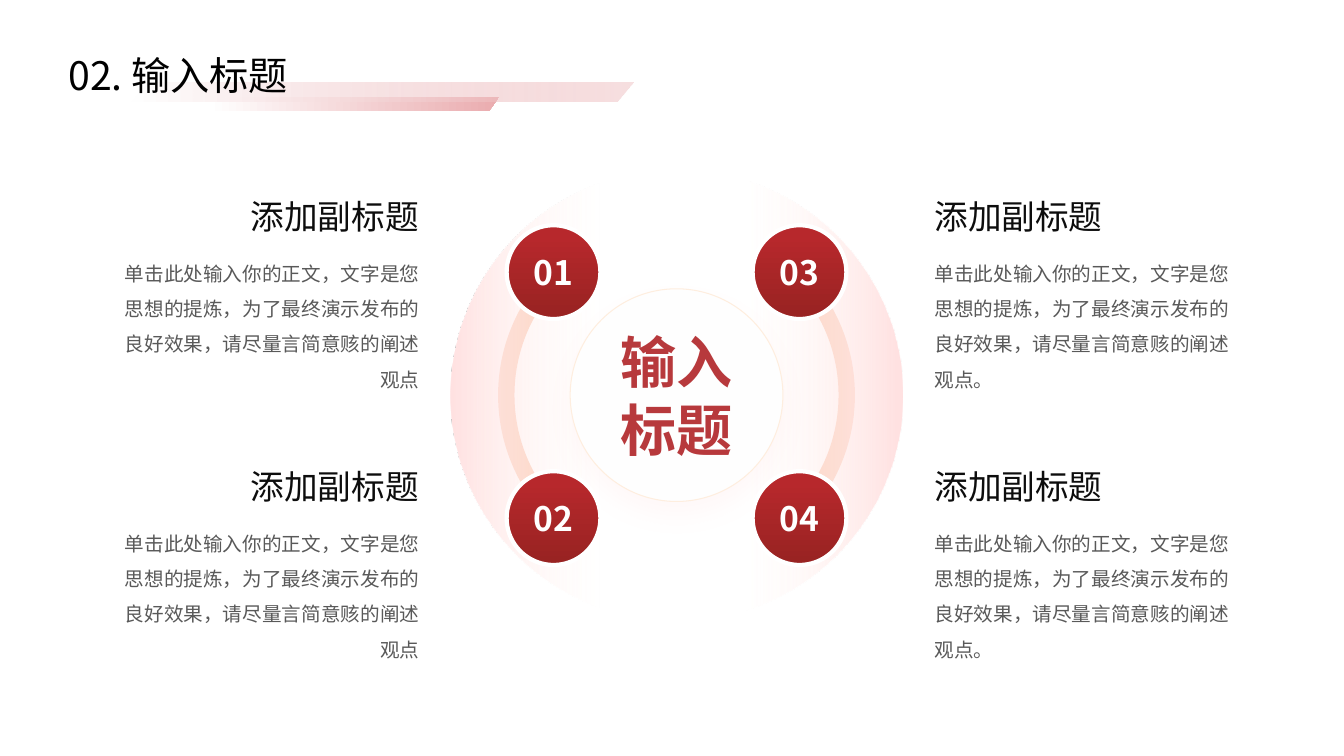
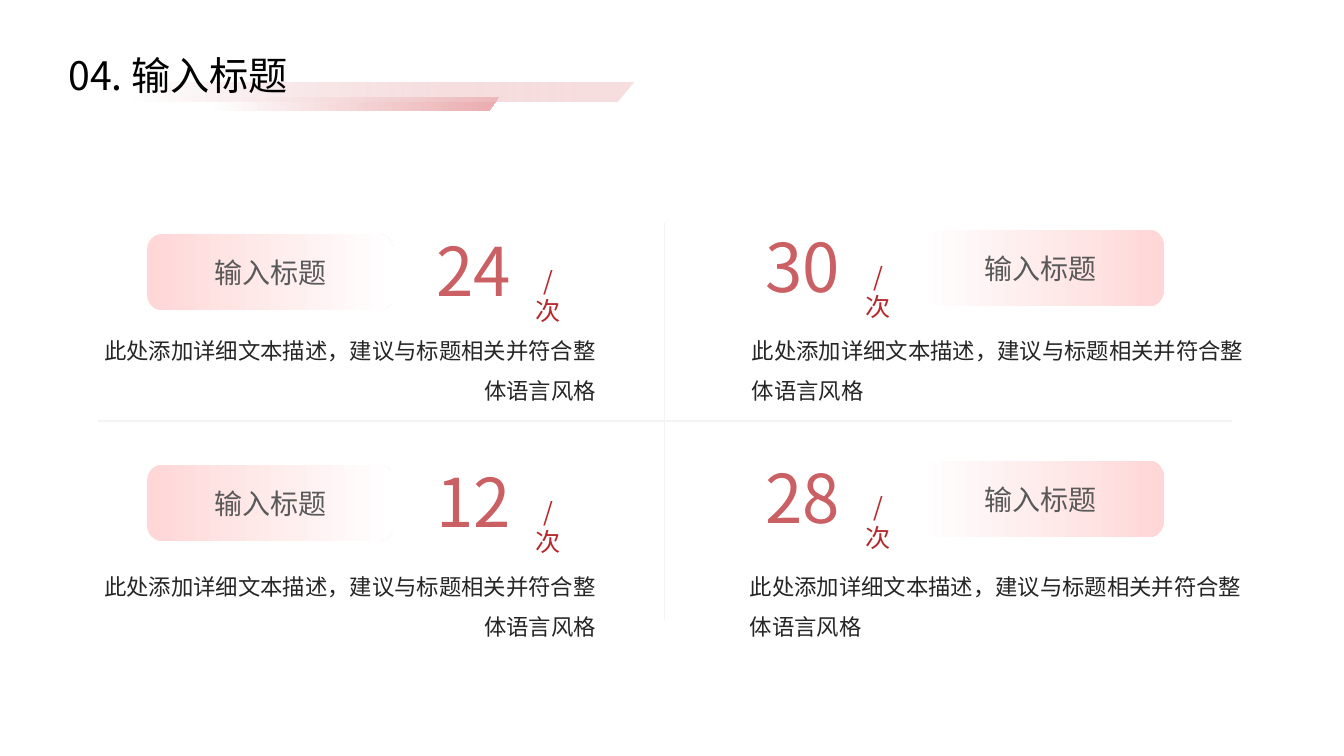
from pptx import Presentation
from pptx.dml.color import RGBColor
from pptx.enum.shapes import MSO_CONNECTOR, MSO_SHAPE
from pptx.enum.text import MSO_ANCHOR, PP_ALIGN
from pptx.oxml import parse_xml
from pptx.oxml.ns import nsdecls, qn
from pptx.util import Inches, Pt
from lxml import etree

LEFT, MID, RIGHT = PP_ALIGN.LEFT, PP_ALIGN.CENTER, PP_ALIGN.RIGHT
TOP, CENTER = MSO_ANCHOR.TOP, MSO_ANCHOR.MIDDLE
OVAL, ROUND = MSO_SHAPE.OVAL, MSO_SHAPE.ROUNDED_RECTANGLE
SLANT, ARC = MSO_SHAPE.PARALLELOGRAM, MSO_SHAPE.BLOCK_ARC
STRAIGHT = MSO_CONNECTOR.STRAIGHT

FONT = "Noto Sans CJK SC"
BLACK = RGBColor(0x00, 0x00, 0x00)
INK = RGBColor(0x0D, 0x0D, 0x0D)
DARK = RGBColor(0x26, 0x26, 0x26)
GREY = RGBColor(0x59, 0x59, 0x59)
RULE = RGBColor(0xF3, 0xF3, 0xF3)
WHITE = RGBColor(0xFF, 0xFF, 0xFF)
PAPER = RGBColor(0xFE, 0xFE, 0xFE)
CREAM = RGBColor(0xFF, 0xF9, 0xF5)
SAND = RGBColor(0xFE, 0xEE, 0xDF)
PEACH = RGBColor(0xFC, 0xCC, 0xB6)
BLUSH = RGBColor(0xFF, 0xE1, 0xE1)
PINK = RGBColor(0xFF, 0xD7, 0xD7)
ROSE = RGBColor(0xEA, 0xAC, 0xAF)
CORAL = RGBColor(0xCA, 0x5F, 0x64)
BRICK = RGBColor(0xB7, 0x39, 0x3C)
RED = RGBColor(0xB7, 0x28, 0x2C)
WINE = RGBColor(0x99, 0x23, 0x22)

HEAD = "输入标题"
SUB = "添加副标题"
BODY = "单击此处输入你的正文，文字是您思想的提炼，为了最终演示发布的良好效果，请尽量言简意赅的阐述观点"
DETAIL = "此处添加详细文本描述，建议与标题相关并符合整体语言风格"


def write(frame, text, size, color, align=LEFT, bold=False, lines=None, anchor=TOP):
    """Put one styled paragraph into a text frame."""
    frame.word_wrap = True
    frame.vertical_anchor = anchor
    para = frame.paragraphs[0]
    para.text = text
    para.alignment = align
    if lines:
        para.line_spacing = lines
    font = para.font
    font.name, font.size, font.bold = FONT, Pt(size), bold
    font.color.rgb = color
    props = para._p.pPr.find(qn("a:defRPr"))
    etree.SubElement(props, qn("a:ea")).set("typeface", FONT)


def label(slide, box, *args, **style):
    """Add a text box."""
    area = slide.shapes.add_textbox(*map(Inches, box))
    write(area.text_frame, *args, **style)


def shape(slide, kind, box, fill=None, adjust=()):
    """Add a flat preset shape without outline."""
    item = slide.shapes.add_shape(kind, *map(Inches, box))
    item.shadow.inherit = False
    item.line.fill.background()
    for i, value in enumerate(adjust):
        item.adjustments[i] = value
    if fill is not None:
        item.fill.solid()
        item.fill.fore_color.rgb = fill
    return item


def blend(item, stops, angle=0):
    """Fill a shape with stops of position, colour and opacity."""
    marks = "".join(
        f'<a:gs pos="{pos * 1000}"><a:srgbClr val="{color}">'
        f'<a:alpha val="{alpha * 1000}"/></a:srgbClr></a:gs>'
        for pos, color, alpha in stops)
    item.fill.background()
    props = item._element.spPr
    props.replace(props.find(qn("a:noFill")), parse_xml(
        f'<a:gradFill {nsdecls("a")} rotWithShape="1"><a:gsLst>{marks}</a:gsLst>'
        f'<a:lin ang="{angle * 60000}" scaled="0"/></a:gradFill>'))


def inner(item, *args, **style):
    """Write centred text inside a shape without margins."""
    frame = item.text_frame
    frame.margin_left = frame.margin_right = 0
    frame.margin_top = frame.margin_bottom = 0
    write(frame, *args, align=MID, anchor=CENTER, **style)


def disc(slide, x, y, size, fill=None):
    """Add a circle around a centre point."""
    return shape(slide, OVAL, (x - size / 2, y - size / 2, size, size), fill)


def edge(item, color, width):
    """Outline a shape."""
    item.line.color.rgb = color
    item.line.width = Pt(width)


def header(slide, number):
    """Draw the slanted bands and the slide title."""
    for box, adjust, alpha in (((2.06, 0.96, 2.89, 0.14), 0.7, 100),
                               ((1.3, 0.82, 4.98, 0.19), 0.87, 38)):
        band = shape(slide, SLANT, box, adjust=[adjust])
        blend(band, [(0, WHITE, 100), (100, ROSE, alpha)])
    label(slide, (0.58, 0.46, 3.32, 0.57), f"{number}. {HEAD}", 28, BLACK)


def note(slide, x, y, align, text):
    """Place a subtitle over its body text, from the box corner."""
    shift = 1.1 if align == RIGHT else 0
    label(slide, (x + shift, y, 2.18, 0.5), SUB, 24, INK, align=align)
    label(slide, (x, y + 0.54, 3.29, 1.51), text, 14, GREY, align=align, lines=1.5)


def wheel(slide, x, y):
    """Draw the ring, the hub and four numbered badges around a centre."""
    for start, end in ((54, 108), (162, 0)):
        arc = shape(slide, ARC, (x - 1.77, y - 1.77, 3.54, 3.54), PEACH,
                    (start, end, 0.046))
        arc.rotation = 45
    blend(disc(slide, x, y, 4.48),
          [(0, BLUSH, 100), (33, CREAM, 0), (65, CREAM, 0), (99, BLUSH, 100)])
    hub = disc(slide, x, y, 2.11, PAPER)
    edge(hub, SAND, 0.75)
    hub._element.spPr.find(qn("a:effectLst")).append(parse_xml(
        f'<a:outerShdw {nsdecls("a")} blurRad="{Pt(15)}" dist="{Pt(10)}" '
        f'dir="5400000"><a:srgbClr val="{PINK}"><a:alpha val="14000"/>'
        '</a:srgbClr></a:outerShdw>'))
    inner(hub, HEAD, 40, BRICK, bold=True)
    for i in range(4):
        col, row = divmod(i, 2)
        badge = disc(slide, x + 1.22 * (2 * col - 1), y + 1.22 * (2 * row - 1), 0.93)
        blend(badge, [(12, RED, 100), (96, WINE, 100)], 90)
        edge(badge, WHITE, 3)
        inner(badge, f"0{i + 1}", 24, WHITE, bold=True)


def count(slide, x, y, number, flip):
    """Place a figure, its unit and its tag, from the box corner."""
    tag, figure, unit = (1.98, 0, 1.34) if flip else (0, 2.4, 3.73)
    chip = shape(slide, ROUND, (x + tag, y + 0.09, 2.44, 0.76), adjust=[0.2])
    ends = (WHITE, PINK) if flip else (PINK, WHITE)
    blend(chip, [(0, ends[0], 100), (100, ends[1], 100)])
    inner(chip, HEAD, 20, GREY)
    label(slide, (x + figure, y, 1.68, 0.91), number, 48, CORAL, align=MID)
    label(slide, (x + unit, y + 0.35, 0.5, 0.7), "/次", 18, RED, align=MID)


def rule(slide, *ends):
    """Draw a thin dividing line."""
    line = slide.shapes.add_connector(STRAIGHT, *map(Inches, ends))
    edge(line, RULE, 1.25)
    etree.SubElement(line._element.spPr, qn("a:effectLst"))


def circle_page(slide):
    """Build the slide with four notes around a wheel."""
    header(slide, "02")
    for x, align, text in ((0.97, RIGHT, BODY), (9.17, LEFT, BODY + "。")):
        for y in (1.89, 4.57):
            note(slide, x, y, align, text)
    wheel(slide, 6.71, 3.92)


def count_page(slide):
    """Build the slide with four figures in a divided grid."""
    header(slide, "04")
    for row, (left, right, edge_x) in enumerate((("24", "30", 7.36), ("12", "28", 7.34))):
        y = 2.19 + 2.29 * row
        count(slide, 1.46, y + 0.04, left, False)
        count(slide, 7.12, y, right, True)
        for x, align in ((0.88, RIGHT), (edge_x, LEFT)):
            label(slide, (x, 3.16 + 2.34 * row, 5.13, 0.86), DETAIL, 16, DARK,
                  align=align, lines=1.5)
    rule(slide, 0.97, 4.18, 12.22, 4.18)
    rule(slide, 6.59, 2.21, 6.59, 6.15)


def main():
    """Build and save the slides."""
    deck = Presentation()
    deck.slide_width, deck.slide_height = Inches(13.33), Inches(7.5)
    for page in (circle_page, count_page):
        page(deck.slides.add_slide(deck.slide_layouts[6]))
    deck.save("out.pptx")


if __name__ == "__main__":
    main()
